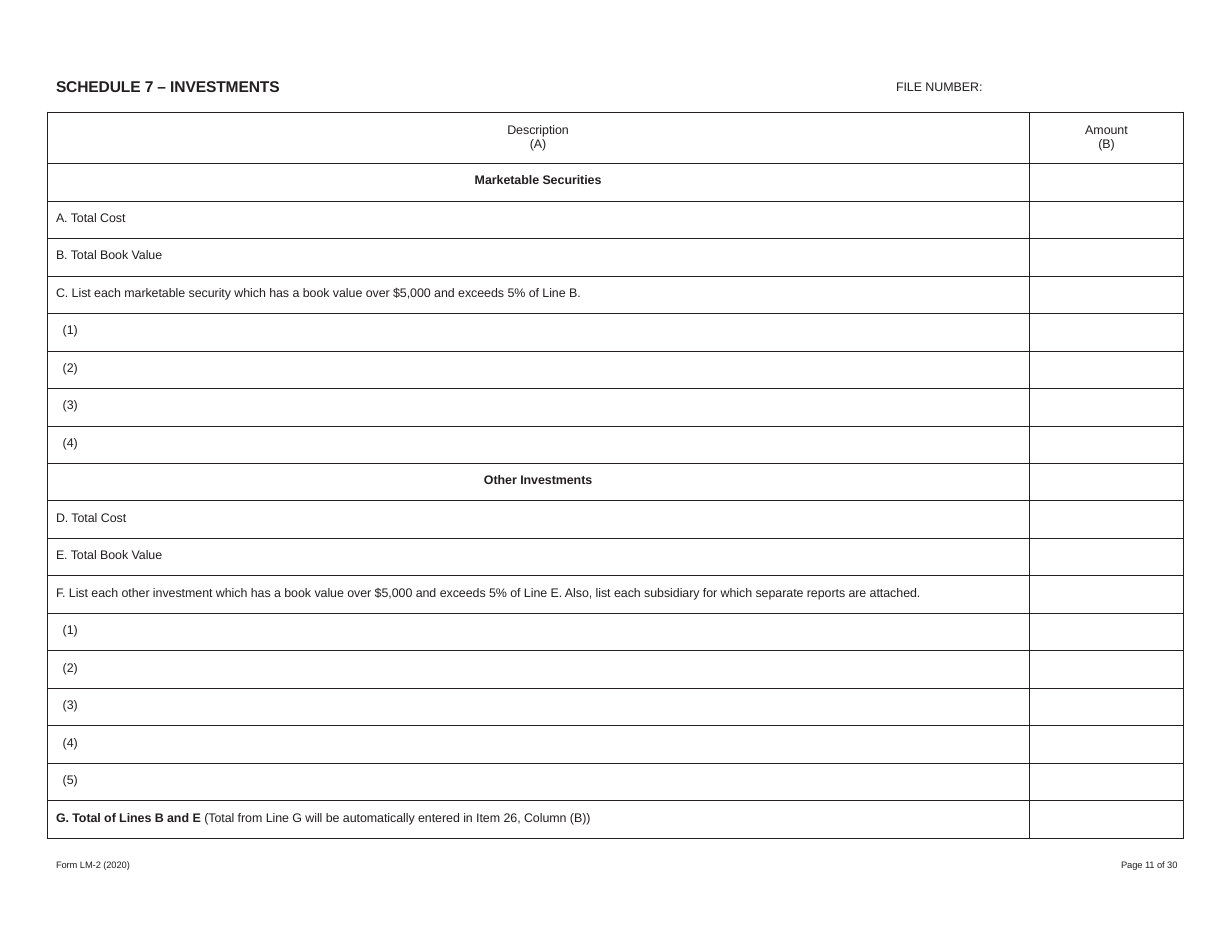
"""Build the Schedule 7 investments form page."""
from lxml.etree import SubElement
from pptx import Presentation
from pptx.dml.color import RGBColor
from pptx.enum.text import MSO_ANCHOR, MSO_AUTO_SIZE, PP_ALIGN
from pptx.oxml.ns import qn
from pptx.util import Inches, Pt

INK = "231F20"


def add_run(paragraph, text, size=8, bold=False):
    run = paragraph.add_run()
    run.text = text
    run.font.name = "Arial"
    run.font.size = Pt(size)
    run.font.bold = bold
    run.font.color.rgb = RGBColor.from_string(INK)
    run.font._element.set("spc", "-5")


def place_line(shape, left, top, width, height, text, size, bold=False):
    shape.left, shape.top = Inches(left), Inches(top)
    shape.width, shape.height = Inches(width), Inches(height)
    frame = shape.text_frame
    frame.margin_left, frame.margin_top = Inches(0.01), Inches(0.02)
    frame.margin_right = frame.margin_bottom = 0
    frame.word_wrap = False
    frame.auto_size = MSO_AUTO_SIZE.NONE
    frame.vertical_anchor = MSO_ANCHOR.TOP
    paragraph = frame.paragraphs[0]
    paragraph.alignment = PP_ALIGN.LEFT
    add_run(paragraph, text, size, bold)


presentation = Presentation()
presentation.slide_width = Inches(11)
presentation.slide_height = Inches(8.5)
slide = presentation.slides.add_slide(presentation.slide_layouts[5])

place_line(slide.shapes.title, 0.49, 0.67, 2.05, 0.18, "SCHEDULE 7 – INVESTMENTS", 10, True)
for left, top, width, height, text, size in [
    (7.99, 0.69, 0.81, 0.16, "FILE NUMBER:", 8),
    (0.49, 7.65, 1.81, 0.11, "Form LM-2 (2020)", 6),
    (10, 7.65, 0.64, 0.11, "Page 11 of 30", 6),
]:
    place_line(slide.shapes.add_textbox(0, 0, 0, 0), left, top, width, height, text, size)

securities = [
    ("heading", "Marketable Securities"),
    ("line", "A. Total Cost"),
    ("line", "B. Total Book Value"),
    ("line", "C. List each marketable security which has a book value over $5,000 and exceeds 5% of Line B."),
    *[("entry", f"({number})") for number in range(1, 5)],
]
others = [
    ("heading", "Other Investments"),
    ("line", "D. Total Cost"),
    ("line", "E. Total Book Value"),
    ("line", "F. List each other investment which has a book value over $5,000 and exceeds 5% of Line E. "
             "Also, list each subsidiary for which separate reports are attached."),
    *[("entry", f"({number})") for number in range(1, 6)],
]
rows = securities + others + [("total", "G. Total of Lines B and E ")]
indents = {"heading": 0, "line": 0.08, "entry": 0.14, "total": 0.08}

frame = slide.shapes.add_table(len(rows) + 1, 2, Inches(0.42), Inches(1), Inches(10.15), Inches(6.49))
table = frame.table
table.first_row = table.horz_banding = False
table.columns[0].width, table.columns[1].width = Inches(8.77), Inches(1.38)
for row in table.rows:
    row.height = Inches(6.03 / len(rows))
table.rows[0].height = Inches(0.46)

for cell in table.iter_cells():
    cell.margin_left = cell.margin_right = cell.margin_top = cell.margin_bottom = 0
    properties = cell._tc.get_or_add_tcPr()
    for side in ("lnL", "lnR", "lnT", "lnB"):
        border = SubElement(properties, qn(f"a:{side}"), w=str(Pt(0.5)))
        fill = SubElement(border, qn("a:solidFill"))
        SubElement(fill, qn("a:srgbClr"), val=INK)
    cell.fill.background()

for column, (label, letter) in enumerate([("Description", "(A)"), ("Amount", "(B)")]):
    cell = table.cell(0, column)
    cell.margin_top = Inches(0.1)
    paragraph = cell.text_frame.paragraphs[0]
    paragraph.alignment = PP_ALIGN.CENTER
    paragraph.line_spacing = Pt(9.1)
    add_run(paragraph, label)
    paragraph.add_line_break()
    add_run(paragraph, letter)

for index, (kind, text) in enumerate(rows, start=1):
    cell = table.cell(index, 0)
    cell.margin_top = Inches(0.09)
    cell.margin_left = Inches(indents[kind])
    paragraph = cell.text_frame.paragraphs[0]
    paragraph.alignment = PP_ALIGN.CENTER if kind == "heading" else PP_ALIGN.LEFT
    add_run(paragraph, text, bold=kind in ("heading", "total"))
    if kind == "total":
        add_run(paragraph, "(Total from Line G will be automatically entered in Item 26, Column (B))")

presentation.save("out.pptx")
